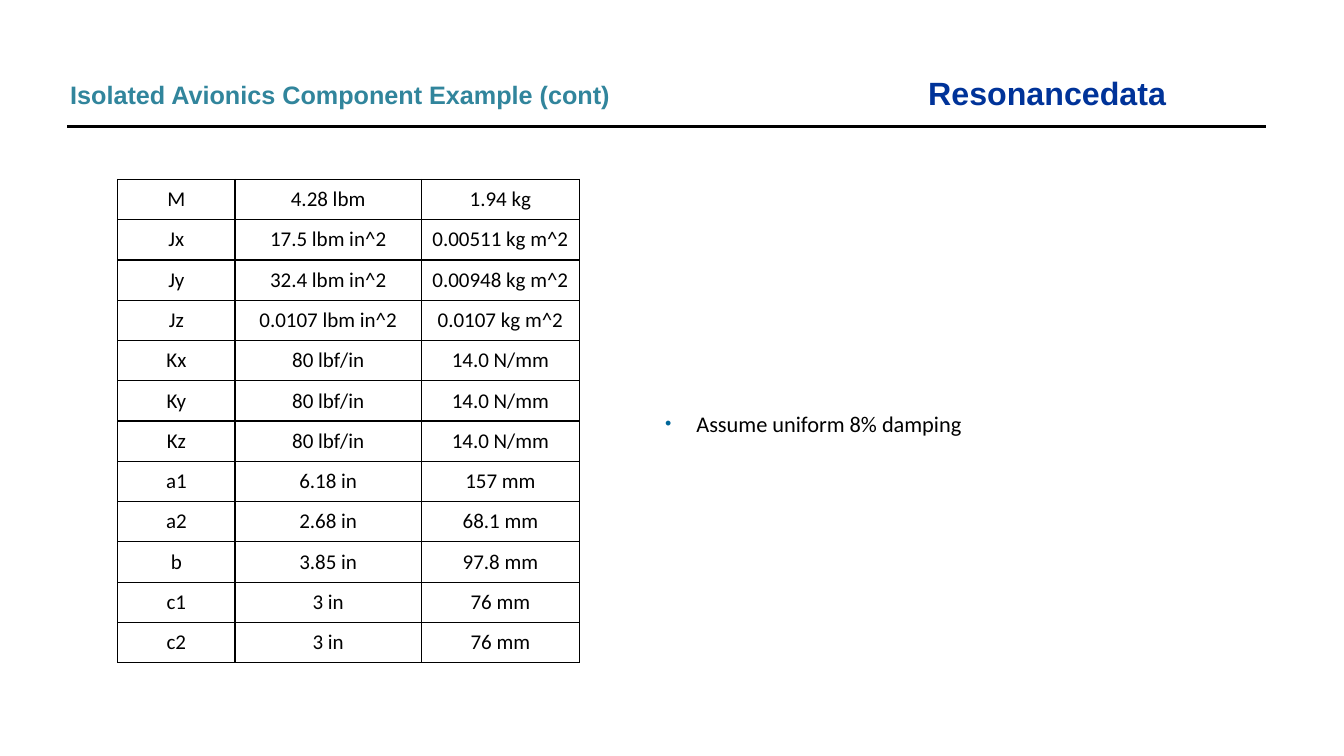
from lxml import etree
from pptx import Presentation
from pptx.dml.color import RGBColor
from pptx.enum.shapes import MSO_CONNECTOR
from pptx.enum.text import MSO_ANCHOR, PP_ALIGN
from pptx.oxml.ns import qn
from pptx.util import Cm, Pt

LINE = MSO_CONNECTOR.STRAIGHT
MIDDLE = MSO_ANCHOR.MIDDLE
LEFT, CENTER = PP_ALIGN.LEFT, PP_ALIGN.CENTER
BLACK = "000000"

WIDTHS = (2.95, 4.7, 3.98)
ROWS = [
    ("M", "4.28 lbm", "1.94 kg"),
    ("Jx", "17.5 lbm in^2", "0.00511 kg m^2"),
    ("Jy", "32.4 lbm in^2", "0.00948 kg m^2"),
    ("Jz", "0.0107 lbm in^2", "0.0107 kg m^2"),
    *[(f"K{axis}", "80 lbf/in", "14.0 N/mm") for axis in "xyz"],
    ("a1", "6.18 in", "157 mm"),
    ("a2", "2.68 in", "68.1 mm"),
    ("b", "3.85 in", "97.8 mm"),
    *[(name, "3 in", "76 mm") for name in ("c1", "c2")],
]


def color(code):
    return RGBColor.from_string(code)


def add_bullet(para, mark, code, scale, indent):
    props = para._p.get_or_add_pPr()
    props.set("marL", str(indent))
    props.set("indent", str(-indent))
    tint = etree.SubElement(props, qn("a:buClr"))
    etree.SubElement(tint, qn("a:srgbClr"), val=code)
    etree.SubElement(props, qn("a:buSzPct"), val=str(scale * 1000))
    etree.SubElement(props, qn("a:buFont"), typeface="Arial")
    etree.SubElement(props, qn("a:buChar"), char=mark)


def write(frame, text, size=15, font="Calibri", code=BLACK, bold=False, align=LEFT):
    para = frame.paragraphs[0]
    para.alignment = align
    run = para.add_run()
    run.text = text
    run.font.size = Pt(size)
    run.font.name = font
    run.font.bold = bold
    run.font.color.rgb = color(code)
    return para


def add_label(slide, left, top, width, height, text, **style):
    box = slide.shapes.add_textbox(Cm(left), Cm(top), Cm(width), Cm(height))
    box.text_frame.word_wrap = True
    return write(box.text_frame, text, **style)


def add_rule(slide, left, right, top):
    rule = slide.shapes.add_connector(LINE, Cm(left), Cm(top), Cm(right), Cm(top))
    rule.line.color.rgb = color(BLACK)
    rule.line.width = Pt(2.25)
    etree.SubElement(rule._element.spPr, qn("a:effectLst"))


def add_border(cell):
    props = cell._tc.get_or_add_tcPr()
    for side in ("lnL", "lnR", "lnT", "lnB"):
        edge = etree.SubElement(props, qn(f"a:{side}"), w=str(Pt(1)))
        fill = etree.SubElement(edge, qn("a:solidFill"))
        etree.SubElement(fill, qn("a:srgbClr"), val=BLACK)


def add_grid(slide, left, top, height):
    frame = slide.shapes.add_table(
        len(ROWS), len(WIDTHS), Cm(left), Cm(top), Cm(sum(WIDTHS)), Cm(height)
    )
    table = frame.table
    table.first_row = False
    table.horz_banding = False
    for column, width in zip(table.columns, WIDTHS):
        column.width = Cm(width)
    for row, values in zip(table.rows, ROWS):
        for cell, value in zip(row.cells, values):
            cell.vertical_anchor = MIDDLE
            cell.margin_left = cell.margin_right = Cm(0.18)
            cell.margin_top = cell.margin_bottom = 0
            add_border(cell)
            cell.fill.background()
            write(cell.text_frame, value, align=CENTER)


def main():
    deck = Presentation()
    deck.slide_width, deck.slide_height = Cm(33.87), Cm(19.05)
    slide = deck.slides.add_slide(deck.slide_layouts[6])
    add_label(slide, 23.14, 1.73, 7.95, 1.2, "Resonancedata",
              size=23, font="Arial", code="003399", bold=True)
    add_rule(slide, 1.7, 31.9, 3.18)
    add_label(slide, 1.52, 1.87, 14.6, 1.02, "Isolated Avionics Component Example (cont)",
              size=18, font="Arial", code="31859C", bold=True)
    add_grid(slide, 2.97, 4.52, 12.19)
    note = add_label(slide, 16.51, 10.2, 9.25, 0.93, "Assume uniform 8% damping", size=16)
    add_bullet(note, "•", "006699", 80, Cm(0.79))
    deck.save("out.pptx")


if __name__ == "__main__":
    main()
